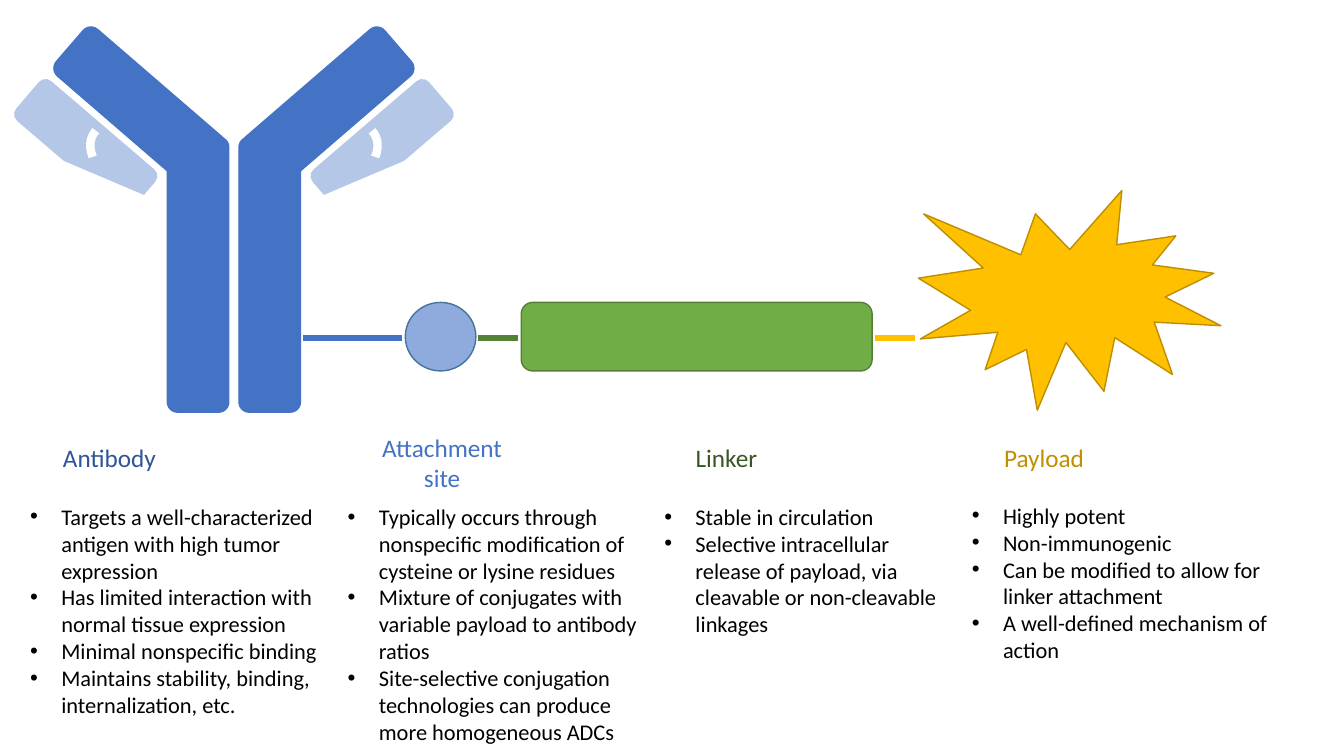
from lxml.etree import SubElement
from pptx import Presentation
from pptx.dml.color import RGBColor
from pptx.enum.shapes import MSO_CONNECTOR, MSO_SHAPE as Preset
from pptx.enum.text import MSO_ANCHOR, MSO_AUTO_SIZE, PP_ALIGN
from pptx.oxml.ns import qn
from pptx.util import Inches, Pt

BLUE, WHITE, PALE = "4472C4", "FFFFFF", "B4C7E7"
MIRROR_SUM = 4.64
ARC_UNIT = 0.6

# preset, box, rotation, fill, line, line width, arc angles
LIGHT_CHAIN = [
    (Preset.RECTANGLE, (3.09, 1.94, 0.26, 0.27), 337, WHITE, WHITE, 1, ()),
    (Preset.ROUNDED_RECTANGLE, (3.53, 0.68, 0.52, 1.52), 49.4, PALE, None, 0, ()),
    (Preset.ARC, (2.51, 0.08, 3.9, 1.06), 141.1, None, WHITE, 6, (162.27, 215.48)),
    (Preset.ARC, (2.97, 1.27, 0.81, 0.56), 145.6, None, WHITE, 6, (175.55, 215.48)),
    (Preset.RECTANGLE, (3.02, 1.8, 1.11, 0.27), 337, WHITE, WHITE, 1, ()),
]
HEAVY_CHAIN = [
    (Preset.ROUNDED_RECTANGLE, (2.37, 1.36, 0.61, 2.73), 0, BLUE, BLUE, 1, ()),
    (Preset.ROUNDED_RECTANGLE, (2.95, 0.14, 0.61, 1.83), 49.2, BLUE, BLUE, 1, ()),
]
CONJUGATE = [
    (Preset.OVAL, (4.02, 3, 0.7, 0.68), "8FAADC", "43739E"),
    (Preset.ROUNDED_RECTANGLE, (5.17, 3, 3.48, 0.68), "70AD47", "538035"),
    (Preset.EXPLOSION1, (9.11, 1.89, 3, 2.18), "FFC000", "BD8E00"),
]
BONDS = [(3.01, 3.99, BLUE), (4.74, 5.14, "548235"), (8.68, 9.08, "FFC000")]
BOND_TOP = 3.35
HEADINGS = [
    ("Antibody", 0.05, "2F5597"),
    ("Linker", 6.17, "385723"),
    ("Payload", 9.32, "BF9000"),
]
NOTES = [
    ((0.2, 4.94, 3.51, 2.26), [
        "Targets a well-characterized antigen with high tumor expression",
        "Has limited interaction with normal tissue expression",
        "Minimal nonspecific binding",
        "Maintains stability, binding, internalization, etc.",
    ]),
    ((3.35, 4.94, 3.31, 2.52), [
        "Typically occurs through nonspecific modification of cysteine or lysine residues",
        "Mixture of conjugates with variable payload to antibody ratios",
        "Site-selective conjugation technologies can produce more homogeneous ADCs",
    ]),
    ((6.49, 4.94, 3.07, 1.45), [
        "Stable in circulation",
        "Selective intracellular release of payload, via cleavable or non-cleavable linkages",
    ]),
    ((9.54, 4.93, 3.51, 1.72), [
        "Highly potent",
        "Non-immunogenic",
        "Can be modified to allow for linker attachment",
        "A well-defined mechanism of action",
    ]),
]


def color(value):
    return RGBColor.from_string(value)


def add_preset(shapes, preset, box, rotation=0, fill=None, line=None, width=1, angles=()):
    shape = shapes.add_shape(preset, *map(Inches, box))
    shape.shadow.inherit = False
    shape.rotation = rotation
    for index, angle in enumerate(angles):
        shape.adjustments[index] = angle * ARC_UNIT
    if fill:
        shape.fill.solid()
        shape.fill.fore_color.rgb = color(fill)
    else:
        shape.fill.background()
    if line:
        shape.line.color.rgb = color(line)
        shape.line.width = Pt(width)
    else:
        shape.line.fill.background()
    return shape


def add_chain(shapes, parts, mirrored):
    for preset, (left, top, width, height), rotation, *style in parts:
        if mirrored:
            left, rotation = MIRROR_SUM - left - width, -rotation
        shape = add_preset(shapes, preset, (left, top, width, height), rotation, *style)
        if mirrored:
            shape.element.spPr.find(qn("a:xfrm")).set("flipH", "1")


def write_text(frame, lines, size=16, hue="000000", align=PP_ALIGN.LEFT, bullet=None):
    frame.word_wrap = True
    for index, line in enumerate(lines):
        paragraph = frame.add_paragraph() if index else frame.paragraphs[0]
        paragraph.alignment = align
        if bullet:
            properties = paragraph._p.get_or_add_pPr()
            properties.set("marL", str(Inches(0.31)))
            properties.set("indent", str(-Inches(0.31)))
            SubElement(properties, qn("a:buFont"), typeface="Arial")
            SubElement(properties, qn("a:buChar"), char=bullet)
        run = paragraph.add_run()
        run.text = line
        run.font.name = "Calibri"
        run.font.size = Pt(size)
        run.font.color.rgb = color(hue)


def add_text(slide, box, lines, **style):
    frame = slide.shapes.add_textbox(*map(Inches, box)).text_frame
    write_text(frame, lines, **style)
    frame.auto_size = MSO_AUTO_SIZE.SHAPE_TO_FIT_TEXT


def add_bond(slide, start, end, hue):
    bond = slide.shapes.add_connector(
        MSO_CONNECTOR.STRAIGHT, *map(Inches, (start, BOND_TOP, end, BOND_TOP)))
    bond.line.color.rgb = color(hue)
    bond.line.width = Pt(4.5)
    SubElement(bond.element.spPr, qn("a:effectLst"))


def main():
    """Build the antibody-drug conjugate slide."""
    presentation = Presentation()
    presentation.slide_width, presentation.slide_height = Inches(13.33), Inches(7.5)
    slide = presentation.slides.add_slide(presentation.slide_layouts[6])

    for mirrored in (False, True):
        add_chain(slide.shapes.add_group_shape().shapes, LIGHT_CHAIN, mirrored)
    heavy_group = slide.shapes.add_group_shape()
    for mirrored in (True, False):
        add_chain(heavy_group.shapes, HEAVY_CHAIN, mirrored)

    for preset, box, fill, line in CONJUGATE:
        add_preset(slide.shapes, preset, box, fill=fill, line=line)
    for bond in BONDS:
        add_bond(slide, *bond)

    site = add_preset(slide.shapes, Preset.OVAL, (3.35, 3.91, 2.07, 1.36))
    site.text_frame.vertical_anchor = MSO_ANCHOR.MIDDLE
    write_text(site.text_frame, ["Attachment site"], size=18, hue=BLUE, align=PP_ALIGN.CENTER)
    for heading, left, hue in HEADINGS:
        add_text(slide, (left, 4.34, 2.07, 0.4), [heading],
                 size=18, hue=hue, align=PP_ALIGN.CENTER)
    for box, lines in NOTES:
        add_text(slide, box, lines, bullet="•")

    presentation.save("out.pptx")


if __name__ == "__main__":
    main()
